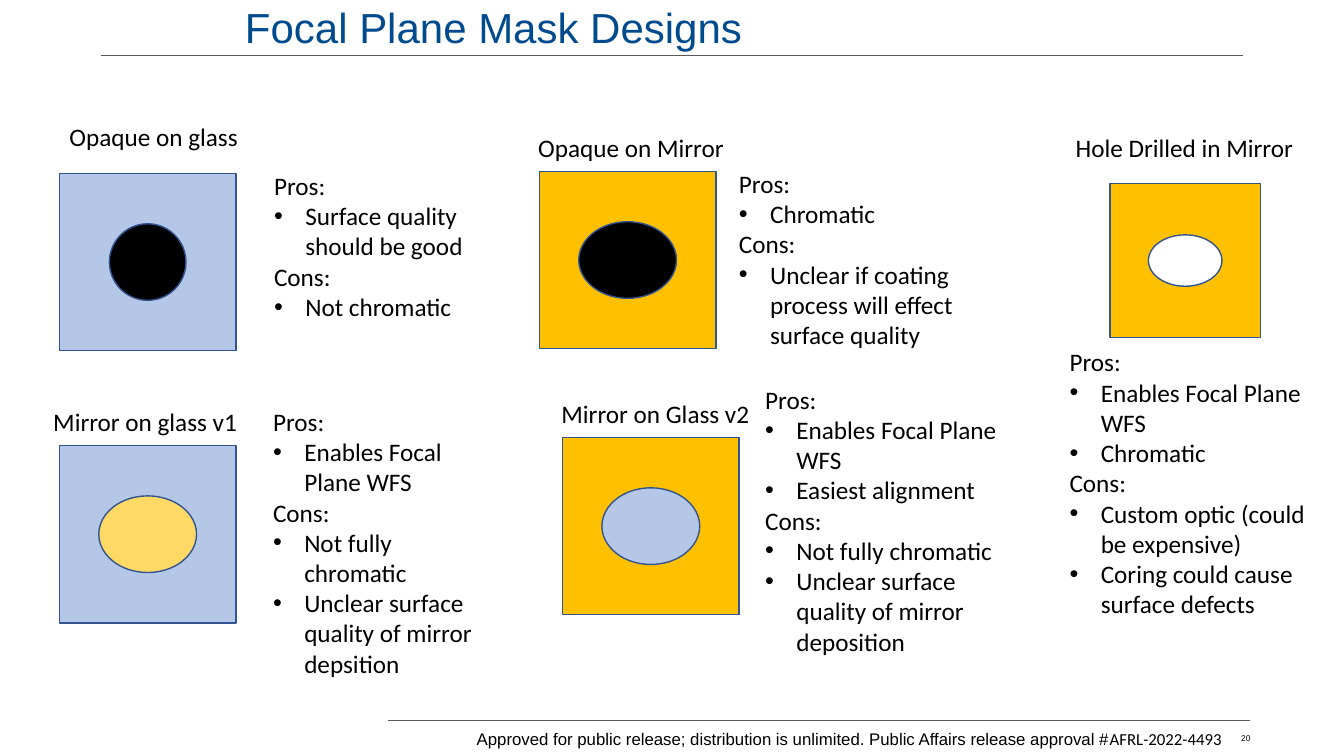
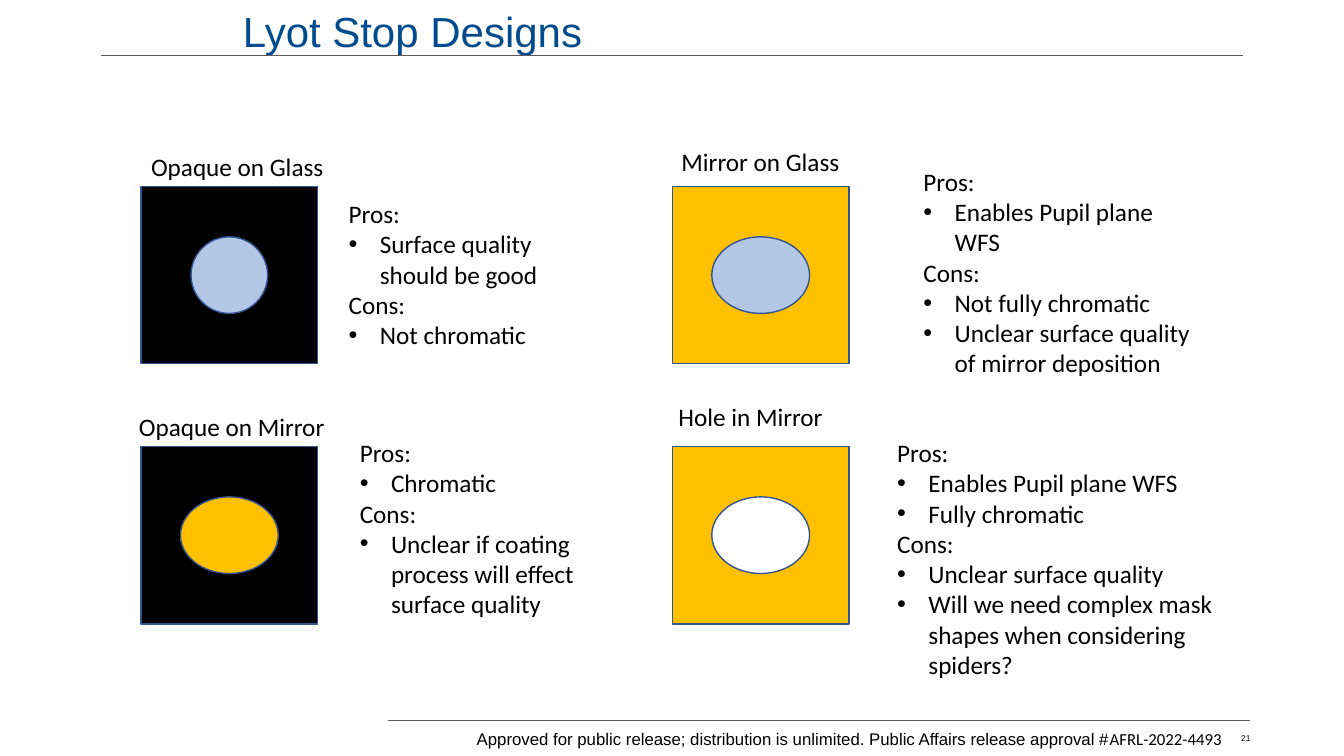
from dataclasses import dataclass, field

from lxml import etree
from pptx import Presentation
from pptx.dml.color import RGBColor
from pptx.enum import shapes, text
from pptx.oxml.ns import qn
from pptx.util import Emu, Pt

PX = 9144


@dataclass(frozen=True)
class Theme:
    title: str = "004B8D"
    ink: str = "000000"
    rule: str = "595A59"
    outline: str = "325491"
    head_font: str = "Arial"
    body_font: str = "Calibri"
    title_size: int = 30
    body_size: int = 18
    release_size: int = 12
    number_size: int = 6
    rule_width: float = 0.5
    outline_width: float = 1
    materials: dict = field(default_factory=lambda: {
        "glass": "B4C7E7",
        "opaque": "000000",
        "mirror": "FFC000",
        "thin mirror": "FFD966",
        "hole": "FFFFFF",
    })


THEME = Theme()

PLATE = (175, 176)
SMALL_PLATE = (149, 153)
DISC = (76, 76)
OVAL = (97, 76)
SMALL_OVAL = (73, 51)
LABEL_HEIGHT = 40
BULLET_INDENT = 31

RULES = [(385, 715, 1240, 715), (100, 55, 1233, 55)]
RELEASE_BOX = (463, 718, 778, 30)
NUMBER_BOX = (1212, 722, 38, 20)
RELEASE = [
    ("Approved for public release; distribution is unlimited. "
     "Public Affairs release approval #", THEME.head_font),
    ("AFRL-2022-4493", THEME.body_font),
]

SLIDES = [
    {
        "title": "Focal Plane Mask Designs", "title_box": (233, 2, 1150, 145), "number": "20",
        "designs": [
            {"name": "Opaque on glass", "label": (59, 115, 189),
             "plate": ("glass", 59, 172, PLATE), "spot": ("opaque", DISC),
             "notes": (262, 164, 260, 162),
             "pros": ["Surface quality should be good"], "cons": ["Not chromatic"]},
            {"name": "Mirror on glass v1", "label": (43, 398, 204),
             "plate": ("glass", 59, 442, PLATE), "spot": ("thin mirror", OVAL),
             "notes": (261, 398, 217, 283),
             "pros": ["Enables Focal Plane WFS"],
             "cons": ["Not fully chromatic", "Unclear surface quality of mirror depsition"]},
            {"name": "Opaque on Mirror", "label": (524, 126, 206),
             "plate": ("mirror", 535, 170, PLATE), "spot": ("opaque", OVAL),
             "notes": (723, 162, 238, 192),
             "pros": ["Chromatic"],
             "cons": ["Unclear if coating process will effect surface quality"]},
            {"name": "Mirror on Glass v2", "label": (547, 390, 208),
             "plate": ("mirror", 558, 434, PLATE), "spot": ("glass", OVAL),
             "notes": (749, 376, 279, 283),
             "pros": ["Enables Focal Plane WFS", "Easiest alignment"],
             "cons": ["Not fully chromatic", "Unclear surface quality of mirror deposition"]},
            {"name": "Hole Drilled in Mirror", "label": (1057, 126, 238),
             "plate": ("mirror", 1101, 182, SMALL_PLATE), "spot": ("hole", SMALL_OVAL),
             "notes": (1051, 339, 254, 313),
             "pros": ["Enables Focal Plane WFS", "Chromatic"],
             "cons": ["Custom optic (could be expensive)", "Coring could cause surface defects"]},
        ],
    },
    {
        "title": "Lyot Stop Designs", "title_box": (231, 6, 1150, 145), "number": "21",
        "designs": [
            {"name": "Opaque on Glass", "label": (140, 145, 200),
             "plate": ("opaque", 140, 185, PLATE), "spot": ("glass", DISC),
             "notes": (336, 192, 260, 162),
             "pros": ["Surface quality should be good"], "cons": ["Not chromatic"]},
            {"name": "Opaque on Mirror", "label": (128, 403, 206),
             "plate": ("opaque", 140, 443, PLATE), "spot": ("mirror", OVAL),
             "notes": (347, 429, 238, 192),
             "pros": ["Chromatic"],
             "cons": ["Unclear if coating process will effect surface quality"]},
            {"name": "Mirror on Glass", "label": (666, 140, 178),
             "plate": ("mirror", 667, 185, PLATE), "spot": ("glass", OVAL),
             "notes": (906, 160, 288, 222),
             "pros": ["Enables Pupil plane WFS"],
             "cons": ["Not fully chromatic", "Unclear surface quality of mirror deposition"]},
            {"name": "Hole in Mirror", "label": (663, 393, 165),
             "plate": ("mirror", 667, 443, PLATE), "spot": ("hole", OVAL),
             "notes": (880, 429, 382, 252),
             "pros": ["Enables Pupil plane WFS", "Fully chromatic"],
             "cons": ["Unclear surface quality",
                      "Will we need complex mask shapes when considering spiders?"]},
        ],
    },
]


def emu(*lengths):
    return [Emu(round(length * PX)) for length in lengths]


def apply(target, values):
    for name, value in values.items():
        setattr(target, name, value)


def style(font, face, size, colour=THEME.ink):
    apply(font, {"name": face, "size": Pt(size)})
    font.color.rgb = RGBColor.from_string(colour)


def add_frame(slide, box, wrap=True):
    frame = slide.shapes.add_textbox(*emu(*box)).text_frame
    apply(frame, {"word_wrap": wrap, "auto_size": text.MSO_AUTO_SIZE.SHAPE_TO_FIT_TEXT})
    return frame


def add_run(paragraph, words, face, size):
    run = paragraph.add_run()
    run.text = words
    style(run.font, face, size)


def add_bullet(paragraph):
    properties = paragraph._p.get_or_add_pPr()
    indent = BULLET_INDENT * PX
    properties.set("marL", str(indent))
    properties.set("indent", str(-indent))
    etree.SubElement(properties, qn("a:buFont")).set("typeface", THEME.head_font)
    etree.SubElement(properties, qn("a:buChar")).set("char", "•")


def add_notes(slide, box, pros, cons):
    frame = add_frame(slide, box)
    lines = [("Pros:", False), *((pro, True) for pro in pros),
             ("Cons:", False), *((con, True) for con in cons)]
    for index, (words, bulleted) in enumerate(lines):
        paragraph = frame.add_paragraph() if index else frame.paragraphs[0]
        if bulleted:
            add_bullet(paragraph)
        add_run(paragraph, words, THEME.body_font, THEME.body_size)


def add_part(slide, kind, material, box):
    part = slide.shapes.add_shape(kind, *emu(*box))
    part.shadow.inherit = False
    part.fill.solid()
    part.fill.fore_color.rgb = RGBColor.from_string(THEME.materials[material])
    part.line.color.rgb = RGBColor.from_string(THEME.outline)
    part.line.width = Pt(THEME.outline_width)


def add_design(slide, design):
    material, left, top, (width, height) = design["plate"]
    add_part(slide, shapes.MSO_SHAPE.RECTANGLE, material, (left, top, width, height))
    material, (spot_width, spot_height) = design["spot"]
    spot_box = (left + (width - spot_width) / 2, top + (height - spot_height) / 2,
                spot_width, spot_height)
    add_part(slide, shapes.MSO_SHAPE.OVAL, material, spot_box)
    label = add_frame(slide, (*design["label"], LABEL_HEIGHT), wrap=False)
    add_run(label.paragraphs[0], design["name"], THEME.body_font, THEME.body_size)
    add_notes(slide, design["notes"], design["pros"], design["cons"])


def add_title(slide, words, box):
    title = slide.shapes.title
    apply(title, dict(zip(("left", "top", "width", "height"), emu(*box))))
    title.text_frame.text = words
    apply(title.text_frame, {"vertical_anchor": text.MSO_ANCHOR.TOP, "word_wrap": True,
                             "auto_size": text.MSO_AUTO_SIZE.NONE})
    paragraph = title.text_frame.paragraphs[0]
    apply(paragraph, {"alignment": text.PP_ALIGN.LEFT, "line_spacing": 0.9})
    style(paragraph.font, THEME.head_font, THEME.title_size, THEME.title)


def add_furniture(slide, number):
    for ends in RULES:
        rule = slide.shapes.add_connector(shapes.MSO_CONNECTOR.STRAIGHT, *emu(*ends))
        rule.line.color.rgb = RGBColor.from_string(THEME.rule)
        rule.line.width = Pt(THEME.rule_width)
        etree.SubElement(rule._element.spPr, qn("a:effectLst"))
    page = add_frame(slide, NUMBER_BOX).paragraphs[0]
    page.alignment = text.PP_ALIGN.RIGHT
    add_run(page, number, THEME.head_font, THEME.number_size)
    release = add_frame(slide, RELEASE_BOX).paragraphs[0]
    for words, face in RELEASE:
        add_run(release, words, face, THEME.release_size)


def main():
    deck = Presentation()
    deck.slide_width, deck.slide_height = emu(1333, 750)
    for content in SLIDES:
        slide = deck.slides.add_slide(deck.slide_layouts[5])
        add_title(slide, content["title"], content["title_box"])
        add_furniture(slide, content["number"])
        for design in content["designs"]:
            add_design(slide, design)
    deck.save("out.pptx")


if __name__ == "__main__":
    main()
